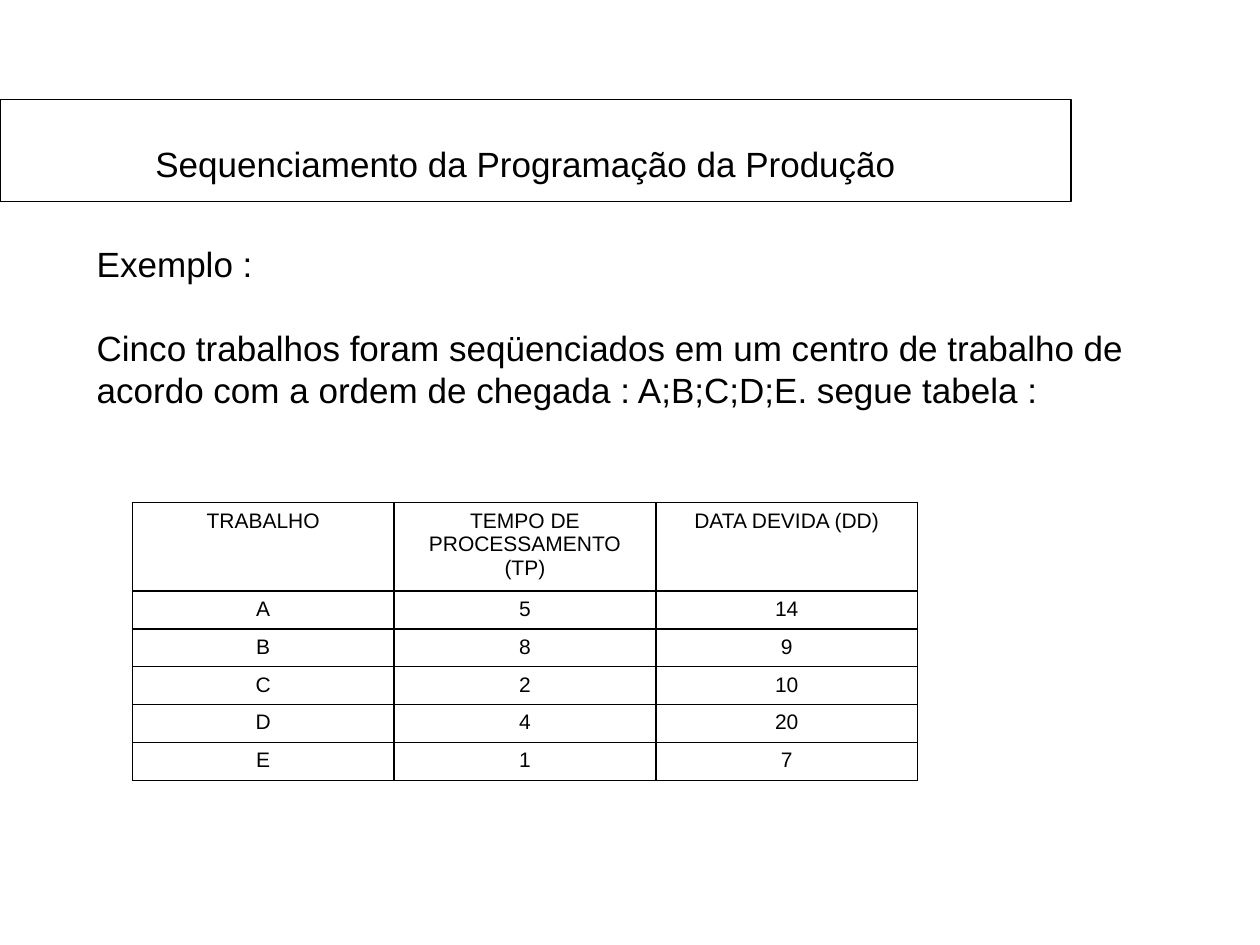
import pptx
import pptx.util
import pptx.dml.color
import pptx.enum.text
import pptx.oxml
import pptx.oxml.ns

Pt = pptx.util.Pt
ALIGN = pptx.enum.text.PP_ALIGN
ANCHOR = pptx.enum.text.MSO_ANCHOR
INK = "000000"
ROWS = [
    ("TRABALHO", "TEMPO DE PROCESSAMENTO (TP)", "DATA DEVIDA (DD)"),
    ("A", "5", "14"),
    ("B", "8", "9"),
    ("C", "2", "10"),
    ("D", "4", "20"),
    ("E", "1", "7"),
]


def color(code):
    """Turn a hex string into a colour."""
    return pptx.dml.color.RGBColor.from_string(code)


def style(para, size, align):
    """Format the runs and alignment of a paragraph."""
    para.alignment = align
    for run in para.runs:
        run.font.name = "Arial"
        run.font.size = Pt(size)
        run.font.color.rgb = color(INK)


def place(shape, box):
    """Move a shape to a box given in points."""
    shape.left, shape.top, shape.width, shape.height = map(Pt, box)


def add_title(slide, box):
    """Fill and frame the title placeholder."""
    title = slide.shapes.title
    place(title, box)
    title.fill.solid()
    title.fill.fore_color.rgb = color("FFFFFF")
    title.line.color.rgb = color(INK)
    title.line.width = Pt(0.75)
    frame = title.text_frame
    frame.text = "Sequenciamento da Programação da Produção"
    frame.auto_size = pptx.enum.text.MSO_AUTO_SIZE.NONE
    frame.vertical_anchor = ANCHOR.MIDDLE
    frame.margin_top = Pt(18.4)
    frame.margin_right = Pt(18.4)
    style(frame.paragraphs[0], 20, ALIGN.CENTER)


def add_body(slide, box):
    """Write the example and its introduction."""
    frame = slide.shapes.add_textbox(*map(Pt, box)).text_frame
    frame.word_wrap = True
    frame.text = (
        "Exemplo :\n"
        "Cinco trabalhos foram seqüenciados em um centro de trabalho de "
        "acordo com a ordem de chegada : A;B;C;D;E. segue tabela :"
    )
    for para in frame.paragraphs:
        style(para, 20, ALIGN.LEFT)
    frame.paragraphs[1].space_before = Pt(24)


def add_edges(cell):
    """Draw the four borders of a cell."""
    props = cell._tc.get_or_add_tcPr()
    space = pptx.oxml.ns.nsdecls("a")
    for spot, side in enumerate("LRTB"):
        edge = pptx.oxml.parse_xml(
            f'<a:ln{side} {space} w="{Pt(1)}"><a:solidFill>'
            f'<a:srgbClr val="{INK}"/></a:solidFill></a:ln{side}>'
        )
        props.insert(spot, edge)


def add_jobs(slide, box, head):
    """Build the job table with a header row of the given height."""
    left, top, width, height = box
    count = len(ROWS[0])
    table = slide.shapes.add_table(len(ROWS), count, *map(Pt, box)).table
    table.horz_banding = False
    table.first_row = False
    for col in table.columns:
        col.width = Pt(width / count)
    for row in table.rows:
        row.height = Pt((height - head) / (len(ROWS) - 1))
    table.rows[0].height = Pt(head)
    for row, texts in zip(table.rows, ROWS):
        for cell, text in zip(row.cells, texts):
            cell.text = text
            cell.fill.background()
            cell.margin_top = cell.margin_bottom = Pt(3.6)
            style(cell.text_frame.paragraphs[0], 12, ALIGN.CENTER)
            add_edges(cell)


def main():
    """Build the slide and save it."""
    deck = pptx.Presentation()
    deck.slide_width, deck.slide_height = Pt(720), Pt(540)
    slide = deck.slides.add_slide(deck.slide_layouts[5])
    add_title(slide, (0, 56.8, 612, 58.4))
    add_body(slide, (48.2, 135, 645.8, 127.4))
    add_jobs(slide, (75.6, 287.2, 448.8, 158.6), 50.2)
    deck.save("out.pptx")


if __name__ == "__main__":
    main()
